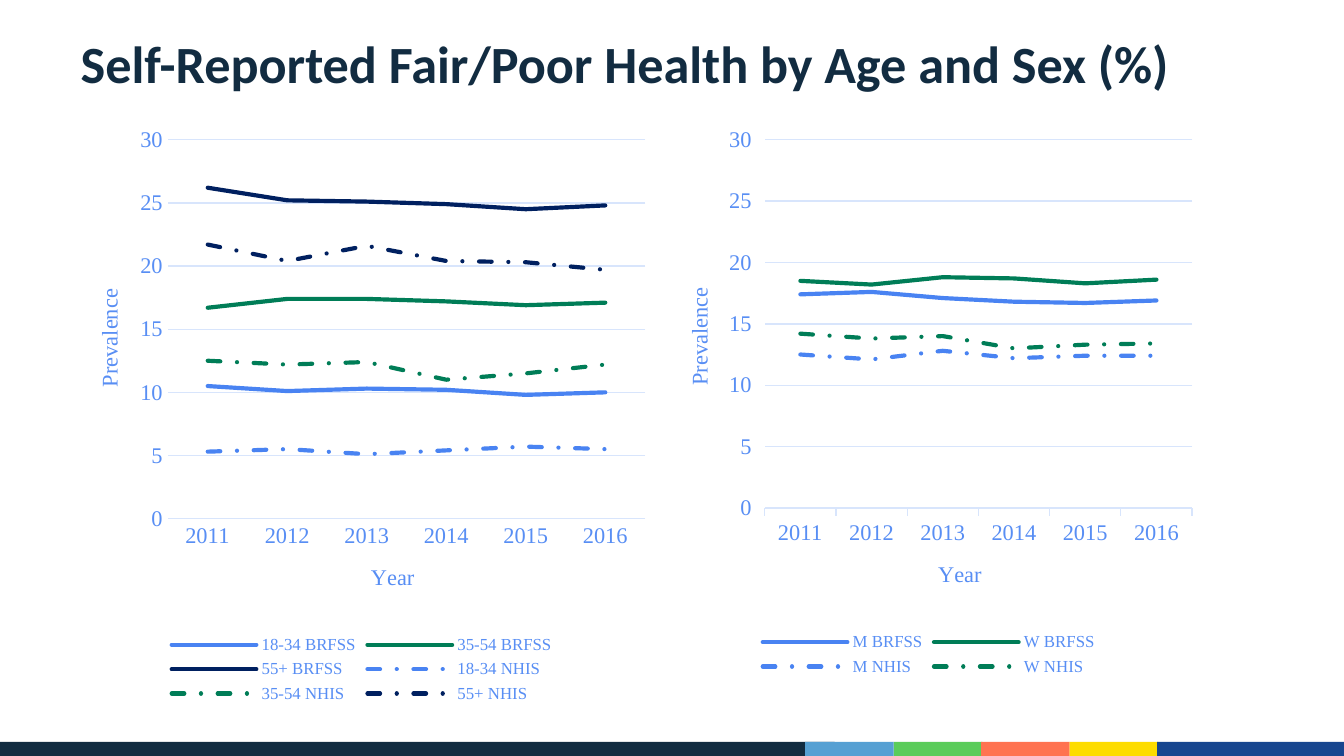
from lxml import etree
from pptx import Presentation
from pptx.chart.data import CategoryChartData
from pptx.dml.color import RGBColor
from pptx.enum.chart import XL_CHART_TYPE, XL_LEGEND_POSITION, XL_MARKER_STYLE, XL_TICK_MARK
from pptx.enum.dml import MSO_LINE
from pptx.enum.shapes import MSO_SHAPE
from pptx.enum.text import MSO_ANCHOR, PP_ALIGN
from pptx.oxml.ns import qn
from pptx.util import Inches, Pt

LINE_CHART = XL_CHART_TYPE.LINE
LEGEND_BOTTOM = XL_LEGEND_POSITION.BOTTOM
NO_MARKER = XL_MARKER_STYLE.NONE
TICK_NONE, TICK_OUT = XL_TICK_MARK.NONE, XL_TICK_MARK.OUTSIDE
SOLID, DASH_DOT = MSO_LINE.SOLID, MSO_LINE.DASH_DOT
RECTANGLE = MSO_SHAPE.RECTANGLE
BOTTOM, LEFT = MSO_ANCHOR.BOTTOM, PP_ALIGN.LEFT

THEME = {
    "title_font": "Calibri", "chart_font": "Times New Roman",
    "title_size": 28, "axis_size": 12, "legend_size": 9,
    "title": "122C41", "chart_text": "588EF4", "grid": "D8E5FC",
    "blue": "4983F2", "green": "007D57", "navy": "002060",
    "line_width": 2.25, "grid_width": 0.75,
}

# Content
TITLE = "Self-Reported Fair/Poor Health by Age and Sex (%)"
YEARS = ["2011", "2012", "2013", "2014", "2015", "2016"]
# Boxes are left, top, width, height in inches on the slide
CHARTS = [
    {
        "box": (0.5, 0.87, 4.39, 4.41), "tick": TICK_NONE,
        "plot": (1.25, 1.04, 3.55, 2.82), "legend": (1.23, 4.69, 2.92, 0.58),
        "year": (2.73, 4.16), "prevalence": (0.68, 2.12),
        "series": [
            ("18-34 BRFSS", "blue", SOLID, [10.5, 10.1, 10.3, 10.2, 9.8, 10]),
            ("35-54 BRFSS", "green", SOLID, [16.7, 17.4, 17.4, 17.2, 16.9, 17.1]),
            ("55+ BRFSS", "navy", SOLID, [26.2, 25.2, 25.1, 24.9, 24.5, 24.8]),
            ("18-34 NHIS", "blue", DASH_DOT, [5.3, 5.5, 5.1, 5.4, 5.7, 5.5]),
            ("35-54 NHIS", "green", DASH_DOT, [12.5, 12.2, 12.4, 11, 11.5, 12.2]),
            ("55+ NHIS", "navy", DASH_DOT, [21.7, 20.4, 21.6, 20.4, 20.3, 19.7]),
        ],
    },
    {
        "box": (4.89, 0.87, 4.06, 4.2), "tick": TICK_OUT,
        "plot": (5.69, 1.04, 3.18, 2.74), "legend": (5.63, 4.67, 2.56, 0.4),
        "year": (6.95, 4.14), "prevalence": (5.07, 2.11),
        "series": [
            ("M BRFSS", "blue", SOLID, [17.4, 17.6, 17.1, 16.8, 16.7, 16.9]),
            ("W BRFSS", "green", SOLID, [18.5, 18.2, 18.8, 18.7, 18.3, 18.6]),
            ("M NHIS", "blue", DASH_DOT, [12.5, 12.1, 12.8, 12.2, 12.4, 12.4]),
            ("W NHIS", "green", DASH_DOT, [14.2, 13.8, 14, 13, 13.3, 13.4]),
        ],
    },
]
# Left edge, width and colour of each footer band
FOOTER_BANDS = [(6.65, 0.66, "5ACC5A"), (7.3, 0.66, "FF7351"), (7.96, 0.66, "FDDC00"),
                (8.61, 1.39, "17468F"), (0, 6.21, "122C41"), (5.99, 0.66, "56A0D3")]
SLIDE_WIDTH = 10
SLIDE_HEIGHT = SLIDE_WIDTH * 9 / 16
FOOTER_TOP, FOOTER_HEIGHT = 5.52, 0.11


def color(name):
    return RGBColor.from_string(THEME[name])


def style_font(font, size, font_name="chart_font", color_name="chart_text", bold=False):
    font.size = Pt(THEME[size])
    font.name = THEME[font_name]
    font.bold = bold
    font.color.rgb = color(color_name)


def style_line(line, color_name, width):
    line.color.rgb = color(color_name)
    line.width = Pt(THEME[width])


def place_in_chart(element, area, box, index, inner=False):
    """Fix a chart part at an area given in slide inches."""
    for old_layout in element.findall(qn("c:layout")):
        element.remove(old_layout)
    layout = etree.Element(qn("c:layout"))
    element.insert(index, layout)
    manual = etree.SubElement(layout, qn("c:manualLayout"))
    left, top, width, height = box
    settings = [("layoutTarget", "inner")] if inner else []
    settings += [("xMode", "edge"), ("yMode", "edge"),
                 ("x", (area[0] - left) / width), ("y", (area[1] - top) / height)]
    if len(area) == 4:
        settings += [("w", area[2] / width), ("h", area[3] / height)]
    for tag, value in settings:
        etree.SubElement(manual, qn(f"c:{tag}")).set("val", str(value))


def add_axis_title(axis, text, position, box, rotation):
    frame = axis.axis_title.text_frame
    frame.text = text
    style_font(frame.paragraphs[0].font, "axis_size")
    element = axis.axis_title._element
    body = element.find(".//" + qn("a:bodyPr"))
    body.set("rot", str(rotation))
    body.set("vert", "horz")
    place_in_chart(element, position, box, 1)


def add_line_chart(slide, details):
    box = details["box"]
    data = CategoryChartData(number_format="General")
    data.categories = YEARS
    for name, _, _, values in details["series"]:
        data.add_series(name, values)
    chart = slide.shapes.add_chart(LINE_CHART, *map(Inches, box), data).chart
    chart.has_title = False
    style_font(chart.font, "axis_size")

    # Series with rounded line ends and joins
    for series, (_, color_name, dash, _) in zip(chart.plots[0].series, details["series"]):
        series.smooth = False
        series.marker.style = NO_MARKER
        style_line(series.format.line, color_name, "line_width")
        series.format.line.dash_style = dash
        outline = series._element.find(qn("c:spPr")).find(qn("a:ln"))
        outline.set("cap", "rnd")
        etree.SubElement(outline, qn("a:round"))
    chart.plots[0].vary_by_categories = False

    # Axes
    year_axis, value_axis = chart.category_axis, chart.value_axis
    for axis in (year_axis, value_axis):
        axis.major_tick_mark = details["tick"]
        axis.minor_tick_mark = TICK_NONE
        style_font(axis.tick_labels.font, "axis_size")
    style_line(year_axis.format.line, "grid", "grid_width")
    value_axis.format.line.fill.background()
    value_axis.minimum_scale, value_axis.maximum_scale = 0, 30
    value_axis.major_unit = 5
    style_line(value_axis.major_gridlines.format.line, "grid", "grid_width")
    add_axis_title(year_axis, "Year", details["year"], box, 0)
    add_axis_title(value_axis, "Prevalence", details["prevalence"], box, -5400000)

    # Legend and plot area
    chart.has_legend = True
    chart.legend.position = LEGEND_BOTTOM
    chart.legend.include_in_layout = False
    style_font(chart.legend.font, "legend_size")
    place_in_chart(chart.legend._element, details["legend"], box, 1)
    plot_area = chart._chartSpace.find(".//" + qn("c:plotArea"))
    place_in_chart(plot_area, details["plot"], box, 0, inner=True)


def add_footer(slide):
    for left, width, fill in FOOTER_BANDS:
        band = slide.shapes.add_shape(RECTANGLE, Inches(left), Inches(FOOTER_TOP),
                                      Inches(width), Inches(FOOTER_HEIGHT))
        band.shadow.inherit = False
        band.fill.solid()
        band.fill.fore_color.rgb = RGBColor.from_string(fill)
        band.line.fill.background()


def add_title(slide):
    title = slide.shapes.title
    title.left, title.top, title.width, title.height = map(Inches, (0.5, 0.23, 9, 0.94))
    frame = title.text_frame
    frame.text = TITLE
    frame.word_wrap = True
    frame.vertical_anchor = BOTTOM
    frame.margin_bottom = Inches(0.47)
    paragraph = frame.paragraphs[0]
    paragraph.alignment = LEFT
    paragraph.line_spacing = Pt(30)
    style_font(paragraph.font, "title_size", "title_font", "title", bold=True)


def main():
    presentation = Presentation()
    presentation.slide_width = Inches(SLIDE_WIDTH)
    presentation.slide_height = Inches(SLIDE_HEIGHT)
    slide = presentation.slides.add_slide(presentation.slide_layouts[5])
    add_footer(slide)
    add_title(slide)
    for details in CHARTS:
        add_line_chart(slide, details)
    presentation.save("out.pptx")


if __name__ == "__main__":
    main()
